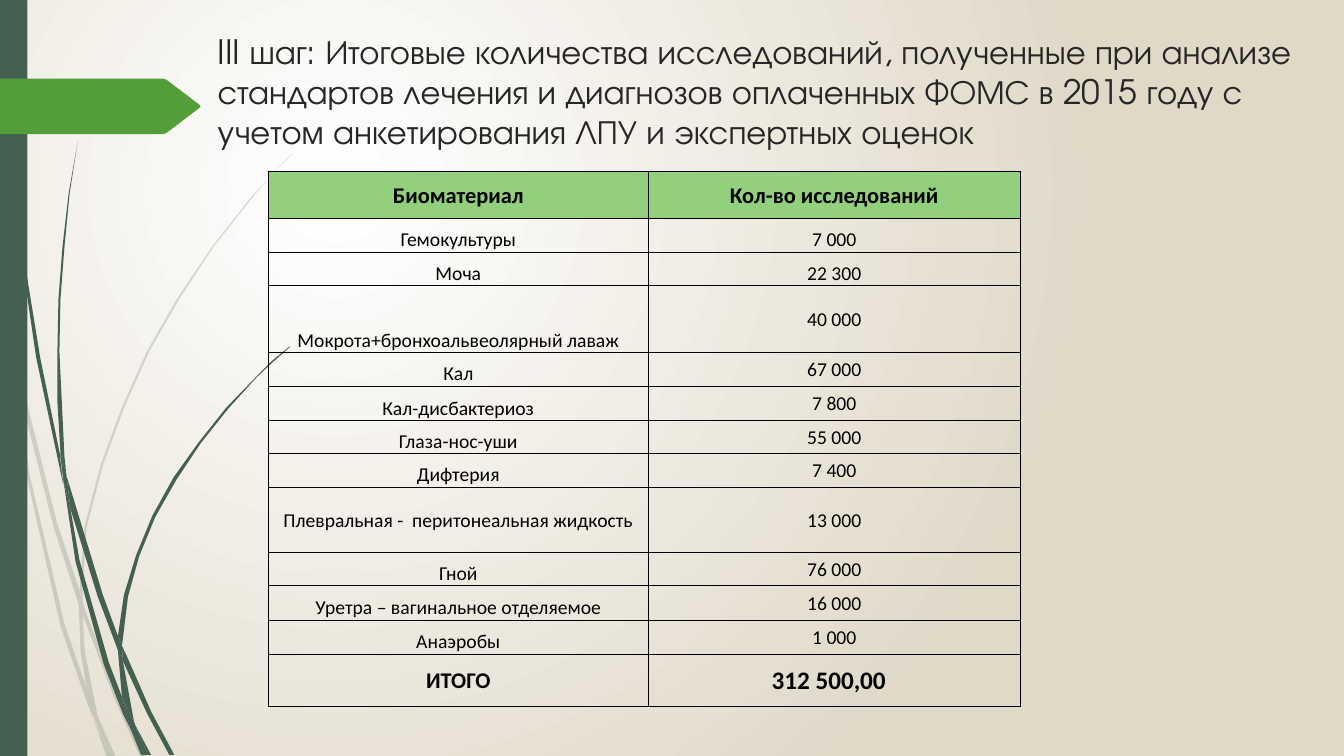
import pptx
import pptx.util
import pptx.dml.color
import pptx.enum.text
import pptx.oxml
import pptx.oxml.ns

Cm = pptx.util.Cm
Pt = pptx.util.Pt
Mid = pptx.enum.text.MSO_ANCHOR.MIDDLE
Low = pptx.enum.text.MSO_ANCHOR.BOTTOM

COLORS = {"dark": "455F51", "arrow": "549E39", "title": "262626", "text": "000000",
          "head": "93D07D", "inner": "FFFFFF", "outer": "E0D9C8"}
TITLE = ("III шаг: Итоговые количества исследований, полученные при анализе стандартов лечения "
         "и диагнозов оплаченных ФОМС в 2015 году с учетом анкетирования ЛПУ и экспертных оценок")
HEAD = ("Биоматериал", "Кол-во исследований")
ROWS = [
    ("Гемокультуры", "7 000", 0.84, Low, Low),
    ("Моча", "22 300", 0.84, Low, Low),
    ("Мокрота+бронхоальвеолярный лаваж", "40 000", 1.7, Low, Mid),
    ("Кал", "67 000", 0.84, Low, Mid),
    ("Кал-дисбактериоз", "7 800", 0.86, Low, Mid),
    ("Глаза-нос-уши", "55 000", 0.84, Low, Mid),
    ("Дифтерия", "7 400", 0.84, Low, Mid),
    ("Плевральная -  перитонеальная жидкость", "13 000", 1.65, Mid, Mid),
    ("Гной", "76 000", 0.84, Low, Mid),
    ("Уретра – вагинальное отделяемое", "16 000", 0.86, Low, Mid),
    ("Анаэробы", "1 000", 0.86, Low, Mid),
]
TOTAL = ("ИТОГО", "312 500,00")
WIDTHS = (9.58, 9.37)

UNIT = Cm(0.0254)
PALE = [
    [(10, 350), (8, 322), (0, 282), (0, 299), (9, 344)],
    [(53, 522), (78, 599), (79, 586), (57, 520), (13, 345), (16, 376)],
    [(85, 607), (82, 596), (82, 610), (114, 694), (139, 751), (144, 751), (118, 692)],
    [(110, 751), (115, 751), (97, 711)],
    [(86, 683), (64, 619), (29, 469), (16, 376), (10, 350), (26, 470), (60, 621),
     (85, 693), (93, 714), (92, 707)],
    [(78, 599), (80, 646), (86, 683), (89, 692), (97, 711), (96, 706), (84, 646),
     (82, 610), (81, 608)],
    [(82, 584), (86, 523), (102, 462), (123, 405), (148, 349), (179, 295), (212, 245),
     (249, 198), (268, 175), (289, 154), (289, 153), (268, 175), (248, 197), (211, 244),
     (177, 294), (146, 348), (121, 404), (100, 461), (84, 522), (79, 584), (79, 586), (82, 596)],
    [(93, 714), (106, 751), (110, 751)],
    [(81, 608), (82, 610), (82, 596), (78, 586), (78, 599)],
    [(89, 692), (86, 683), (92, 707), (94, 714), (110, 751), (97, 711)],
]
DARK = [
    [(7, 110), (18, 233), (36, 355), (62, 477), (63, 481), (60, 457), (60, 453), (40, 355),
     (20, 232), (8, 109), (5, 48), (4, 0), (3, 0), (4, 48)],
    [(97, 592), (117, 645), (117, 633), (117, 631), (102, 590), (66, 472), (70, 505)],
    [(125, 649), (121, 641), (122, 656), (146, 708), (168, 749), (173, 749), (150, 706)],
    [(121, 691), (108, 657), (79, 556), (70, 505), (63, 477), (75, 557), (103, 659),
     (122, 708), (129, 722), (128, 717)],
    [(66, 472), (64, 453), (59, 349), (60, 297), (64, 245), (69, 193), (77, 141), (68, 193),
     (62, 245), (58, 297), (57, 349), (57, 399), (60, 449), (66, 472)],
    [(147, 749), (150, 749), (134, 719)],
    [(63, 477), (70, 505), (66, 472), (60, 449), (60, 453)],
    [(122, 633), (127, 592), (138, 552), (154, 513), (175, 476), (199, 440), (226, 406),
     (255, 374), (271, 359), (288, 344), (287, 344), (270, 358), (255, 373), (224, 405),
     (197, 439), (172, 474), (151, 512), (135, 551), (123, 590), (117, 631), (121, 641)],
    [(129, 722), (140, 749), (144, 749)],
    [(117, 645), (121, 691), (128, 706), (134, 719), (133, 716), (122, 656), (120, 651)],
    [(117, 645), (120, 651), (122, 656), (121, 641), (117, 631), (117, 633)],
    [(128, 706), (121, 691), (128, 717), (129, 722), (144, 749), (147, 749), (134, 719)],
]
BAR = [(0, 0), (27, 0), (27, 750), (0, 750)]
ARROW = [(198, 107), (165, 132), (162, 133), (0, 133), (0, 78), (162, 78), (165, 79),
         (198, 104), (199, 105.5)]


def color(name):
    return pptx.dml.color.RGBColor.from_string(COLORS[name])


def node(tag, inside):
    space = pptx.oxml.ns.nsdecls("a")
    return pptx.oxml.parse_xml(f"<a:{tag} {space}>{inside}</a:{tag.split()[0]}>")


def tint(name):
    return f'<a:srgbClr val="{COLORS[name]}"/>'


def paint(shape, name):
    shape.shadow.inherit = False
    shape.fill.solid()
    shape.fill.fore_color.rgb = color(name)
    shape.line.fill.background()


def outline(slide, points, name, alpha=None):
    pen = slide.shapes.build_freeform(*points[0], scale=UNIT)
    pen.add_line_segments(points[1:], close=True)
    shape = pen.convert_to_shape()
    paint(shape, name)
    if alpha:
        tone = shape.fill._xPr.find(".//" + pptx.oxml.ns.qn("a:srgbClr"))
        tone.append(node(f'alpha val="{alpha * 1000}"', ""))


def write(frame, text, font, size, name, bold=False):
    run = frame.paragraphs[0].add_run()
    run.text = text
    run.font.name = font
    run.font.size = Pt(size)
    run.font.bold = bold
    run.font.color.rgb = color(name)


def backdrop(slide):
    fill = slide.background.fill
    fill.solid()
    old = fill._xPr.find(pptx.oxml.ns.qn("a:solidFill"))
    stops = "".join(f'<a:gs pos="{spot}">{tint(name)}</a:gs>'
                    for spot, name in ((0, "inner"), (100000, "outer")))
    fill._xPr.replace(old, node('gradFill rotWithShape="1"', f"<a:gsLst>{stops}</a:gsLst>"
                      '<a:path path="circle"><a:fillToRect l="50000" t="50000" '
                      'r="100000" b="100000"/></a:path>'))
    for points in PALE:
        outline(slide, points, "dark", 20)
    for points in DARK:
        outline(slide, points, "dark")
    bar = slide.shapes.add_shape(pptx.enum.shapes.MSO_SHAPE.RECTANGLE, 0, 0, Cm(0.69), Cm(19.05))
    paint(bar, "dark")
    outline(slide, ARROW, "arrow")


def heading(slide):
    title = slide.shapes.title
    title.left, title.top, title.width, title.height = Cm(5.23), Cm(0.64), Cm(27.81), Cm(3.33)
    frame = title.text_frame
    frame.word_wrap = True
    frame.auto_size = pptx.enum.text.MSO_AUTO_SIZE.SHAPE_TO_FIT_TEXT
    frame.vertical_anchor = pptx.enum.text.MSO_ANCHOR.TOP
    frame.paragraphs[0].alignment = pptx.enum.text.PP_ALIGN.LEFT
    write(frame, TITLE, "TeX Gyre Adventor", 24, "title")


def fill_cell(cell, text, size, bold, anchor, head):
    cell.margin_left = cell.margin_right = cell.margin_top = Cm(0.03)
    cell.margin_bottom = 0
    cell.vertical_anchor = anchor
    cell.text_frame.paragraphs[0].alignment = pptx.enum.text.PP_ALIGN.CENTER
    write(cell.text_frame, text, "Calibri", size, "text", bold)
    prop = cell._tc.get_or_add_tcPr()
    for side in ("lnL", "lnR", "lnT", "lnB"):
        prop.append(node(f'{side} w="6350"', f"<a:solidFill>{tint('text')}</a:solidFill>"))
    if head:
        cell.fill.solid()
        cell.fill.fore_color.rgb = color("head")
    else:
        cell.fill.background()


def grid(slide):
    lines = [(*HEAD, 1.19, Mid, Mid), *ROWS, (*TOTAL, 1.32, Mid, Mid)]
    high = sum(line[2] for line in lines)
    table = slide.shapes.add_table(len(lines), 2, Cm(6.76), Cm(4.32),
                                   Cm(sum(WIDTHS)), Cm(high)).table
    table.first_row = table.horz_banding = False
    for col, width in zip(table.columns, WIDTHS):
        col.width = Cm(width)
    last = len(lines) - 1
    for row, line in enumerate(lines):
        table.rows[row].height = Cm(line[2])
        bold = row in (0, last)
        for col in range(2):
            size = 18 if (row, col) == (last, 1) else 16 if bold else 14
            fill_cell(table.cell(row, col), line[col], size, bold, line[3 + col], row == 0)
    table.cell(last, 1).margin_right = Cm(0.31)


def main():
    deck = pptx.Presentation()
    deck.slide_width, deck.slide_height = Cm(33.87), Cm(19.05)
    slide = deck.slides.add_slide(deck.slide_layouts[5])
    backdrop(slide)
    heading(slide)
    grid(slide)
    deck.save("out.pptx")


if __name__ == "__main__":
    main()
